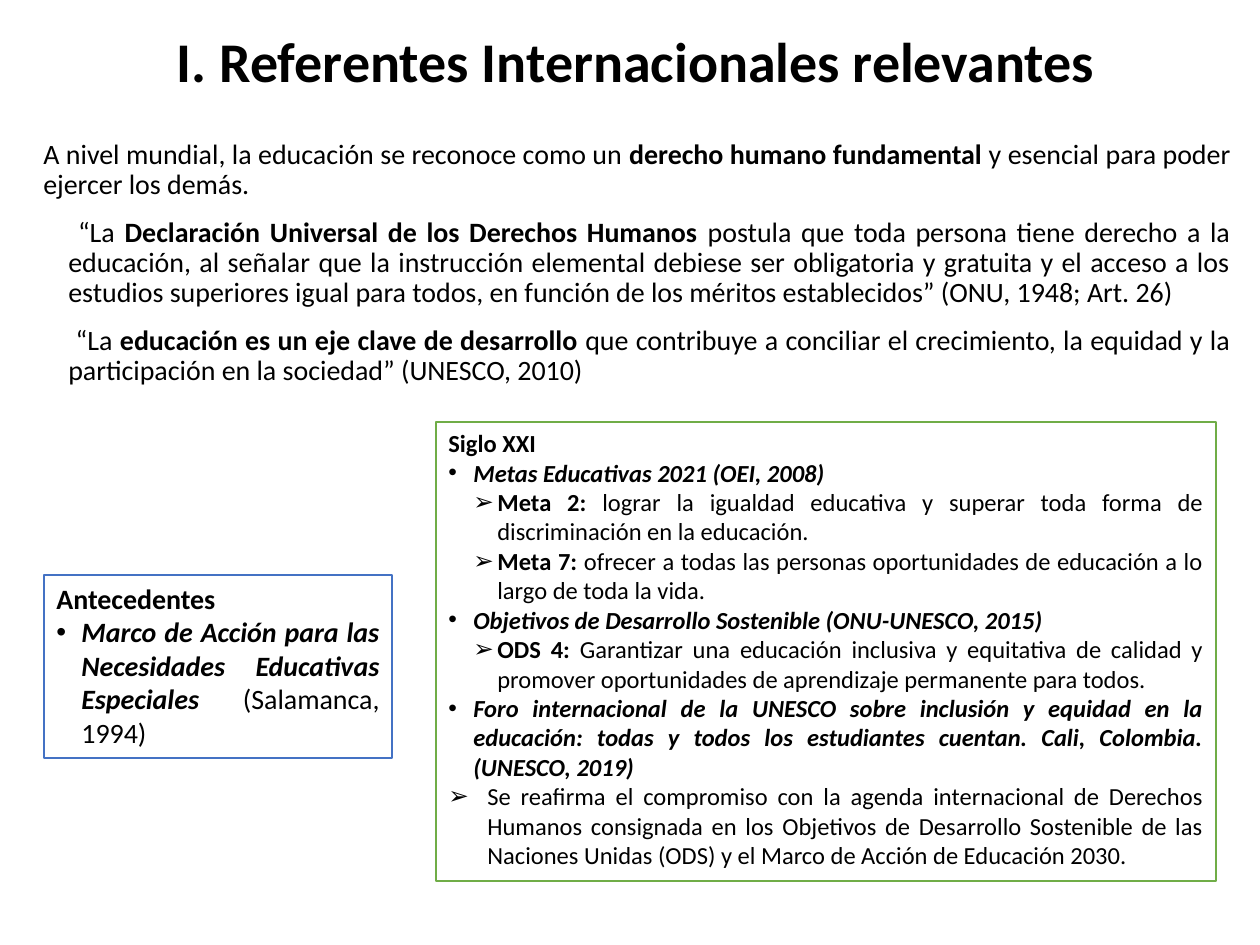
from lxml import etree
from pptx import Presentation
from pptx.dml.color import RGBColor
from pptx.enum.shapes import MSO_SHAPE
from pptx.enum.text import MSO_ANCHOR, MSO_AUTO_SIZE, PP_ALIGN
from pptx.oxml.ns import qn
from pptx.util import Emu, Pt

RECTANGLE = MSO_SHAPE.RECTANGLE
MIDDLE, TOP = MSO_ANCHOR.MIDDLE, MSO_ANCHOR.TOP
GROW, FIXED = MSO_AUTO_SIZE.SHAPE_TO_FIT_TEXT, MSO_AUTO_SIZE.NONE
CENTER, JUSTIFY = PP_ALIGN.CENTER, PP_ALIGN.JUSTIFY

PX_PER_INCH = 126
TITLE_ONLY = 5
FONT = "Calibri"
COLORS = {"text": "000000", "paper": "FFFFFF", "blue": "4472C4", "green": "70AD47"}

# Paragraph levels: left margin px, first-line indent px, bullet
LEVELS = {
    "plain": (0, 0, None),
    "quote": (25, 0, None),
    "item": (25, -25, "•"),
    "goal": (49, -24, "➢"),
    "note": (39, -39, "➢"),
}

# Each paragraph is a level followed by (text, style) spans; b = bold, i = italic
INTRODUCTION = [
    ("plain", ("A nivel mundial, la educación se reconoce como un ", ""),
     ("derecho humano fundamental", "b"),
     (" y esencial para poder ejercer los demás.", "")),
    ("quote", (" “La ", ""),
     ("Declaración Universal de los Derechos Humanos ", "b"),
     ("postula que toda persona tiene derecho a la educación, al señalar que la "
      "instrucción elemental debiese ser obligatoria y gratuita y el acceso a los "
      "estudios superiores igual para todos, en función de los méritos "
      "establecidos” (ONU, 1948; Art. 26)", "")),
    ("quote", (" “La ", ""),
     ("educación es un eje clave de desarrollo ", "b"),
     ("que contribuye a conciliar el crecimiento, la equidad y la participación "
      "en la sociedad” (UNESCO, 2010)", "")),
]
BACKGROUND = [
    ("plain", ("Antecedentes", "b")),
    ("item", ("Marco de Acción para las Necesidades Educativas Especiales ", "bi"),
     ("(Salamanca, 1994)", "")),
]
CENTURY = [
    ("plain", ("Siglo XXI", "b")),
    ("item", ("Metas Educativas 2021 (OEI, 2008)", "bi")),
    ("goal", ("Meta 2: ", "b"),
     ("lograr la igualdad educativa y superar toda forma de discriminación en la "
      "educación.", "")),
    ("goal", ("Meta 7: ", "b"),
     ("ofrecer a todas las personas oportunidades de educación a lo largo de toda "
      "la vida.", "")),
    ("item", ("Objetivos de Desarrollo Sostenible (ONU-UNESCO, 2015)", "bi")),
    ("goal", ("ODS 4: ", "b"),
     ("Garantizar una educación inclusiva y equitativa de calidad y promover "
      "oportunidades de aprendizaje permanente para todos.", "")),
    ("item", ("Foro internacional de la UNESCO sobre inclusión y equidad en la "
              "educación: todas y todos los estudiantes cuentan. Cali, Colombia. "
              "(UNESCO, 2019)", "bi")),
    ("note", ("Se reafirma el compromiso con la agenda internacional de Derechos "
              "Humanos consignada en los Objetivos de Desarrollo Sostenible de las "
              "Naciones Unidas (ODS) y el Marco de Acción de Educación 2030.", "")),
]


def px(value):
    return Emu(round(value * 914400 / PX_PER_INCH))


def color(name):
    return RGBColor.from_string(COLORS[name])


class PageBuilder:
    """Holds the text style and the slide being filled."""

    def __init__(self, page):
        self.page = page

    def format_span(self, span, size, style):
        span.font.name = FONT
        span.font.size = Pt(size)
        span.font.bold = "b" in style
        span.font.italic = "i" in style
        span.font.color.rgb = color("text")

    def set_level(self, para, level):
        margin, indent, bullet = LEVELS[level]
        properties = para._p.get_or_add_pPr()
        properties.set("marL", str(px(margin)))
        properties.set("indent", str(px(indent)))
        if bullet:
            etree.SubElement(properties, qn("a:buFont")).set("typeface", "Arial")
            etree.SubElement(properties, qn("a:buChar")).set("char", bullet)

    def fill_text(self, frame, paragraphs, size, line_spacing=1.0, space_before=0):
        frame.word_wrap = True
        for index, (level, *spans) in enumerate(paragraphs):
            para = frame.add_paragraph() if index else frame.paragraphs[0]
            para.alignment = JUSTIFY
            para.line_spacing = line_spacing
            para.space_before = Pt(space_before)
            self.set_level(para, level)
            for text, style in spans:
                span = para.add_run()
                span.text = text
                self.format_span(span, size, style)

    def title(self, text, left, top, width, height):
        box = self.page.shapes.title
        box.left, box.top, box.width, box.height = map(px, (left, top, width, height))
        frame = box.text_frame
        frame.text = text
        frame.vertical_anchor = MIDDLE
        frame.auto_size = FIXED
        para = frame.paragraphs[0]
        para.alignment = CENTER
        para.line_spacing = 0.9
        self.format_span(para.runs[0], 32, "b")

    def body(self, paragraphs, left, top, width, height):
        box = self.page.shapes.add_textbox(*map(px, (left, top, width, height)))
        self.fill_text(box.text_frame, paragraphs, 16, line_spacing=0.9, space_before=10)

    def panel(self, paragraphs, size, outline, left, top, width, height):
        box = self.page.shapes.add_shape(RECTANGLE, *map(px, (left, top, width, height)))
        box.shadow.inherit = False
        box.fill.solid()
        box.fill.fore_color.rgb = color("paper")
        box.line.color.rgb = color(outline)
        box.line.width = Pt(1)
        box.text_frame.vertical_anchor = TOP
        box.text_frame.auto_size = GROW
        self.fill_text(box.text_frame, paragraphs, size)


def main():
    deck = Presentation()
    deck.slide_width, deck.slide_height = px(1260), px(945)
    builder = PageBuilder(deck.slides.add_slide(deck.slide_layouts[TITLE_ONLY]))
    builder.title("I. Referentes Internacionales relevantes", 93, 18, 1086, 92)
    builder.body(INTRODUCTION, 31, 134, 1212, 265)
    builder.panel(BACKGROUND, 16, "blue", 44, 575, 348, 183)
    builder.panel(CENTURY, 14, "green", 436, 422, 780, 459)
    deck.save("out.pptx")


if __name__ == "__main__":
    main()
